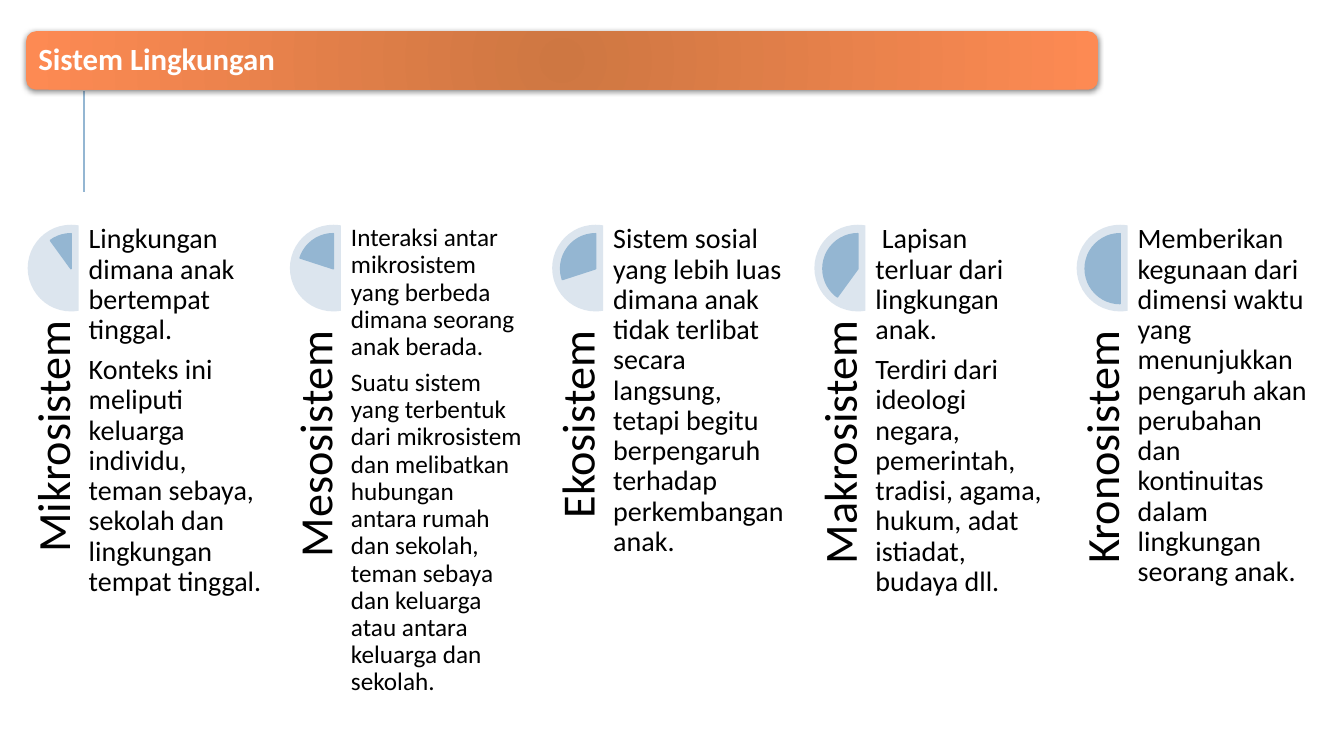
"""Builds a slide comparing the five environmental systems around a child."""
from dataclasses import dataclass

from lxml import etree
from pptx import Presentation
from pptx.dml.color import RGBColor
from pptx.enum.shapes import MSO_CONNECTOR, MSO_SHAPE
from pptx.enum.text import MSO_ANCHOR, MSO_AUTO_SIZE, PP_ALIGN
from pptx.oxml import parse_xml
from pptx.oxml.ns import nsdecls, qn
from pptx.util import Inches, Pt

STRAIGHT = MSO_CONNECTOR.STRAIGHT
ROUNDED, CHORD, PIE = MSO_SHAPE.ROUNDED_RECTANGLE, MSO_SHAPE.CHORD, MSO_SHAPE.PIE
TOP, MIDDLE, BOTTOM = MSO_ANCHOR.TOP, MSO_ANCHOR.MIDDLE, MSO_ANCHOR.BOTTOM
LEFT, RIGHT = PP_ALIGN.LEFT, PP_ALIGN.RIGHT
NO_FIT = MSO_AUTO_SIZE.NONE
TITLE_ONLY = 5


@dataclass(frozen=True)
class Theme:
    font: str = "Calibri"
    blue: str = "94B6D2"
    pale: str = "DCE5EE"
    bar_inner: str = "CE7742"
    bar_outer: str = "FD8A53"
    white: str = "FFFFFF"
    black: str = "000000"
    title: int = 22
    label: int = 33
    body: int = 20
    small: int = 18


SYSTEMS = [
    ("Mikrosistem", Theme.body, [
        "Lingkungan dimana anak bertempat tinggal.",
        "Konteks ini meliputi keluarga individu, teman sebaya, sekolah dan "
        "lingkungan tempat tinggal."]),
    ("Mesosistem ", Theme.small, [
        "Interaksi antar mikrosistem yang berbeda dimana seorang anak berada.",
        "Suatu sistem yang terbentuk dari mikrosistem dan melibatkan hubungan "
        "antara rumah dan sekolah, teman sebaya dan keluarga atau antara "
        "keluarga dan sekolah."]),
    ("Ekosistem ", Theme.body, [
        "Sistem sosial yang lebih luas dimana anak tidak terlibat secara "
        "langsung, tetapi begitu berpengaruh terhadap perkembangan anak."]),
    ("Makrosistem", Theme.body, [
        " Lapisan terluar dari lingkungan anak.",
        "Terdiri dari ideologi negara, pemerintah, tradisi, agama, hukum, "
        "adat istiadat, budaya dll."]),
    ("Kronosistem ", Theme.body, [
        "Memberikan kegunaan dari dimensi waktu yang menunjukkan pengaruh akan "
        "perubahan dan kontinuitas dalam lingkungan seorang anak."]),
]


class Deck:
    """Draws styled elements on a slide grid of 0.1 inch cells."""

    def __init__(self, theme):
        self.theme = theme
        self.prs = Presentation()
        self.prs.slide_width, self.prs.slide_height = self.cells(133.3, 75)
        self.s = self.prs.slides.add_slide(self.prs.slide_layouts[TITLE_ONLY])

    def cells(self, *counts):
        return [Inches(n / 10) for n in counts]

    def fill_text(self, sp, paras, size, color, anchor=TOP, align=LEFT, inset=0, bold=False):
        tf = sp.text_frame
        tf.word_wrap, tf.auto_size, tf.vertical_anchor = True, NO_FIT, anchor
        tf.margin_left = tf.margin_right = Inches(inset)
        tf.margin_top = tf.margin_bottom = Inches(inset)
        tf.text = "\n".join(paras)
        for p in tf.paragraphs:
            p.alignment, p.line_spacing = align, 0.9
            p.space_before, p.space_after = Pt(0), Pt(size * 0.35)
            for r in p.runs:
                r.font.name, r.font.size, r.font.bold = self.theme.font, Pt(size), bold
                r.font.color.rgb = RGBColor.from_string(color)

    def title(self, text, box):
        sp = self.s.shapes.title
        sp.left, sp.top, sp.width, sp.height = self.cells(*box)
        self.fill_text(sp, [text], self.theme.title, self.theme.white, MIDDLE,
                       inset=0.09, bold=True)
        self.s.shapes._spTree.append(sp._element)

    def text(self, paras, box, size, rotation=0, **style):
        sp = self.s.shapes.add_textbox(*self.cells(*box))
        sp.rotation = rotation
        self.fill_text(sp, paras, size, self.theme.black, **style)

    def shape(self, kind, box, color, angles=(), outlined=False):
        sp = self.s.shapes.add_shape(kind, *self.cells(*box))
        sp.shadow.inherit = False
        sp.fill.solid()
        sp.fill.fore_color.rgb = RGBColor.from_string(color)
        if outlined:
            sp.line.color.rgb = RGBColor.from_string(color)
            sp.line.width = Pt(1.25)
        else:
            sp.line.fill.background()
        for i, angle in enumerate(angles):
            sp.adjustments[i] = angle
        return sp

    def bar(self, box):
        sp = self.shape(ROUNDED, box, self.theme.bar_outer)
        sp.fill.gradient()
        for stop, color in zip(sp.fill.gradient_stops,
                               (self.theme.bar_inner, self.theme.bar_outer)):
            stop.color.rgb = RGBColor.from_string(color)
        spPr = sp._element.spPr
        grad = spPr.find(qn("a:gradFill"))
        grad.replace(grad.find(qn("a:lin")), parse_xml(
            f'<a:path {nsdecls("a")} path="circle">'
            '<a:fillToRect l="100000" t="100000" r="100000" b="100000"/></a:path>'))
        spPr.find(qn("a:effectLst")).append(parse_xml(
            f'<a:outerShdw {nsdecls("a")} blurRad="{Pt(4)}" dist="{Pt(1)}" '
            'dir="5400000" rotWithShape="0"><a:srgbClr val="000000">'
            '<a:alpha val="50000"/></a:srgbClr></a:outerShdw>'))

    def line(self, *ends):
        c = self.s.shapes.add_connector(STRAIGHT, *self.cells(*ends))
        c.line.color.rgb = RGBColor.from_string(self.theme.blue)
        c.line.width = Pt(1.5)
        etree.SubElement(c._element.spPr, qn("a:effectLst"))

    def system(self, i, name, size, paras):
        x = 2.75 + 26.01 * i
        self.shape(CHORD, (x, 22.3, 8.6, 8.6), self.theme.pale, (48, 168))
        self.shape(PIE, (x + 0.85, 23.2, 6.9, 6.9), self.theme.blue,
                   (140.4 - 21.6 * i, 162), outlined=True)
        self.text([name], (x - 9.9, 41.7, 25, 5.2), self.theme.label, 270,
                  anchor=BOTTOM, align=RIGHT)
        self.text(paras, (x + 6.05, 22.3, 17.2, 34.5), size)


def main():
    deck = Deck(Theme())
    deck.line(8.3, 19, 8.3, 9)
    deck.bar((2.6, 3.1, 106.3, 5.8))
    deck.title("Sistem Lingkungan", (2.9, 3.4, 105.7, 5.2))
    for i, system in enumerate(SYSTEMS):
        deck.system(i, *system)
    deck.prs.save("out.pptx")


if __name__ == "__main__":
    main()
